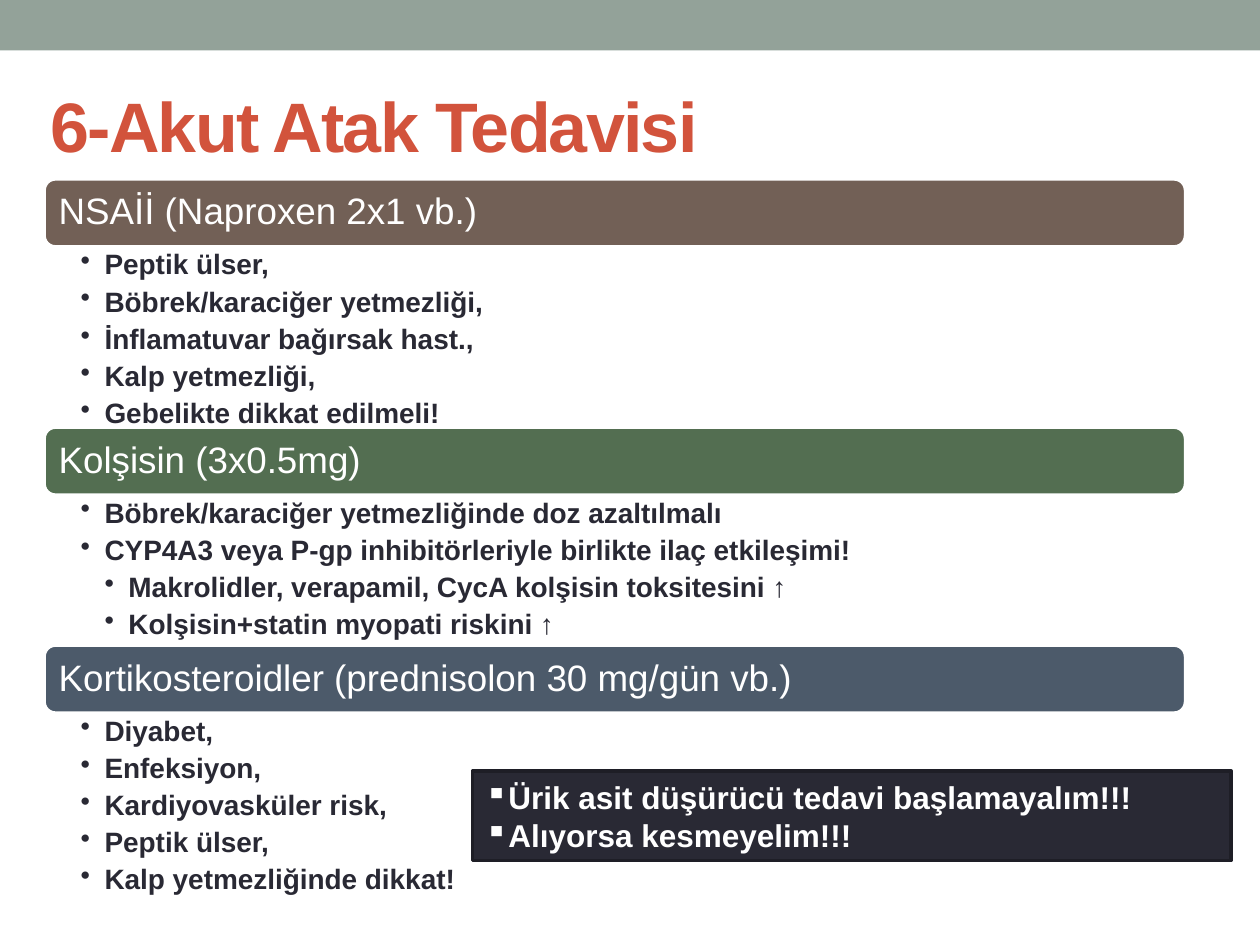
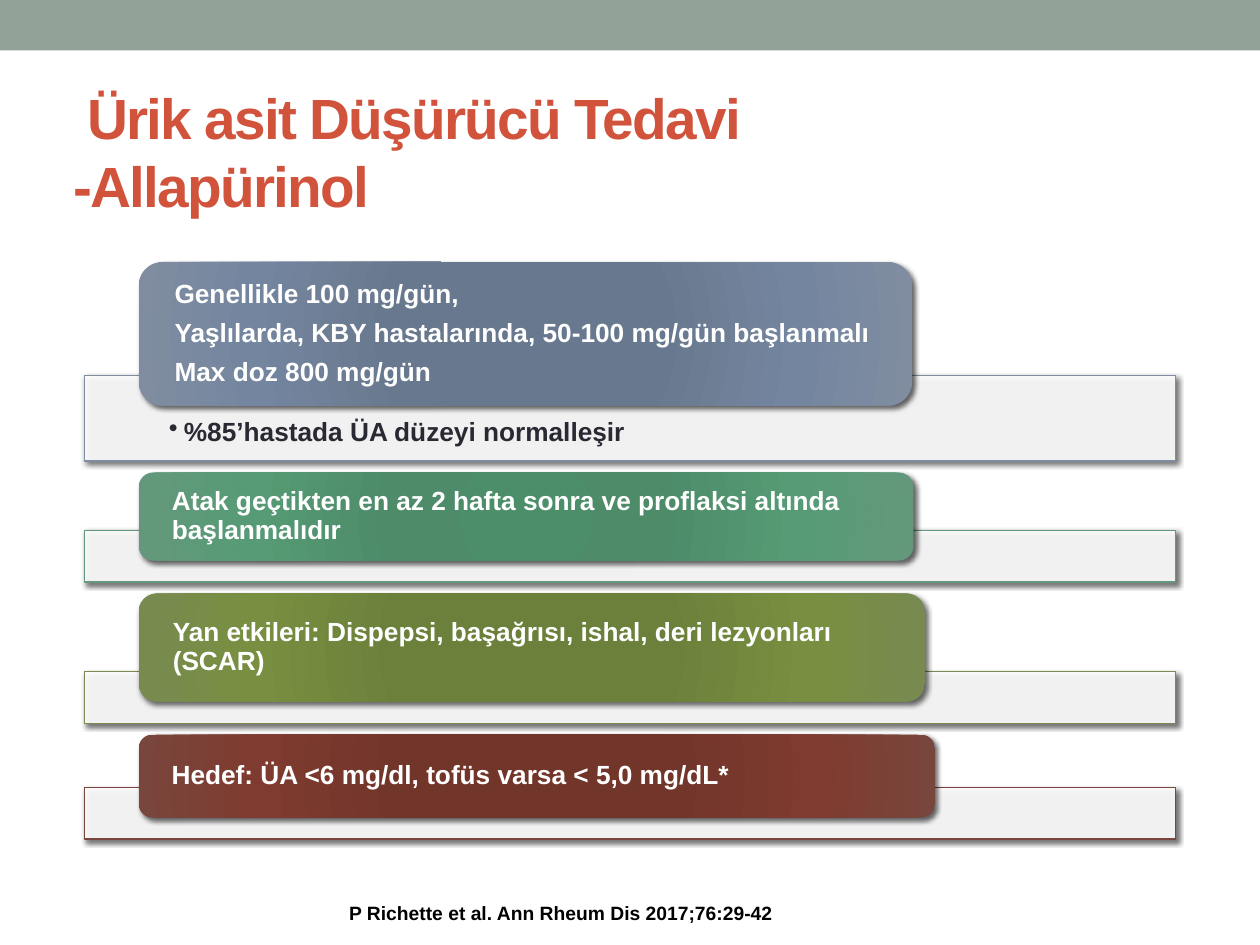
from dataclasses import dataclass
from typing import Optional

from lxml.etree import SubElement
from pptx import Presentation
from pptx.dml.color import RGBColor
from pptx.enum.shapes import MSO_SHAPE
from pptx.enum.text import MSO_ANCHOR, MSO_AUTO_SIZE, PP_ALIGN
from pptx.oxml import parse_xml
from pptx.oxml.ns import nsdecls, qn
from pptx.presentation import Presentation as Deck
from pptx.shapes.autoshape import Shape
from pptx.slide import Slide
from pptx.util import Inches, Pt

FONT = "Arial"
BAND, TITLE = "93A299", "D2533C"
DARK, DARK_EDGE, WHITE, BLACK = "292934", "1E1E26", "FFFFFF", "000000"
GRADIENT_STOPS = (0, 34, 70, 100)


@dataclass(frozen=True)
class Line:
    text: str
    bullet: str = ""
    level: int = 0
    hang: float = 0.0


@dataclass(frozen=True)
class Style:
    size: float
    color: str
    bold: bool = True
    line_spacing: float = 1.0
    after: float = 0.0
    tracking: float = 0.0


@dataclass(frozen=True)
class Drug:
    name: str
    color: str
    body_height: float
    notes: tuple[Line, ...]


@dataclass(frozen=True)
class Rule:
    lines: tuple[str, ...]
    width: float
    height: float
    gradient: tuple[str, str, str, str]
    bar_height: float = 0.41
    detail: str = ""


DRUG_NAME = Style(21, WHITE, bold=False, line_spacing=0.9, after=7)
DRUG_NOTE = Style(16, DARK, line_spacing=0.9, after=4)
WARNING = Style(18, WHITE)
RULE_TEXT = Style(15, WHITE, line_spacing=0.9, after=6)
RULE_DETAIL = Style(15, DARK, line_spacing=0.9, after=3)
CITATION = Style(11, BLACK)


def note(text: str, level: int = 1) -> Line:
    return Line(text, "•", level, 0.19)


DRUGS = (
    Drug("NSAİİ (Naproxen 2x1 vb.)", "726056", 1.43, (
        note("Peptik ülser,"),
        note("Böbrek/karaciğer yetmezliği,"),
        note("İnflamatuvar bağırsak hast.,"),
        note("Kalp yetmezliği,"),
        note("Gebelikte dikkat edilmeli!"),
    )),
    Drug("Kolşisin (3x0.5mg)", "536E51", 1.19, (
        note("Böbrek/karaciğer yetmezliğinde doz azaltılmalı"),
        note("CYP4A3 veya P-gp inhibitörleriyle birlikte ilaç etkileşimi!"),
        note("Makrolidler, verapamil, CycA kolşisin toksitesini ↑", 2),
        note("Kolşisin+statin myopati riskini ↑", 2),
    )),
    Drug("Kortikosteroidler (prednisolon 30 mg/gün vb.)", "4C5A6A", 1.43, (
        note("Diyabet,"),
        note("Enfeksiyon,"),
        note("Kardiyovasküler risk,"),
        note("Peptik ülser,"),
        note("Kalp yetmezliğinde dikkat!"),
    )),
)

RULES = (
    Rule(("Genellikle 100 mg/gün,",
          "Yaşlılarda, KBY hastalarında, 50-100 mg/gün başlanmalı",
          "Max doz 800 mg/gün"),
         6.14, 1.14, ("677790", "68788E", "74869F", "808DA0"),
         0.68, "%85’hastada ÜA düzeyi normalleşir"),
    Rule(("Atak geçtikten en az 2 hafta sonra ve proflaksi altında başlanmalıdır",),
         6.15, 0.70, ("4B8E69", "4D8B69", "569B75", "64987C")),
    Rule(("Yan etkileri: Dispepsi, başağrısı, ishal, deri lezyonları (SCAR)",),
         6.24, 0.86, ("6C8238", "6B803A", "788F41", "788A50")),
    Rule(("Hedef: ÜA <6 mg/dl, tofüs varsa < 5,0 mg/dL*",),
         6.32, 0.66, ("743327", "72352A", "7F3B2F", "79463D")),
)


def rgb(color: str) -> RGBColor:
    return RGBColor.from_string(color)


def write(box: Shape, lines: tuple[Line, ...], style: Style,
          insets: tuple[float, float, float, float] = (0.1, 0.05, 0.1, 0.05),
          anchor: MSO_ANCHOR = MSO_ANCHOR.MIDDLE) -> None:
    """Fill a shape with one paragraph per line; a newline in a line is a break."""
    frame = box.text_frame
    frame.word_wrap = True
    frame.auto_size = MSO_AUTO_SIZE.NONE
    frame.vertical_anchor = anchor
    (frame.margin_left, frame.margin_top,
     frame.margin_right, frame.margin_bottom) = map(Inches, insets)
    for index, line in enumerate(lines):
        para = frame.add_paragraph() if index else frame.paragraphs[0]
        para.alignment = PP_ALIGN.LEFT
        para.level = line.level
        para.line_spacing = style.line_spacing
        para.space_before = Pt(0)
        para.space_after = Pt(style.after)
        if line.bullet:
            properties = para._p.get_or_add_pPr()
            properties.set("marL", str(Inches(line.hang * max(line.level, 1))))
            properties.set("indent", str(-Inches(line.hang)))
            SubElement(properties, qn("a:buChar"), char=line.bullet)
        for part_index, part in enumerate(line.text.split("\n")):
            if part_index:
                para.add_line_break()
            span = para.add_run()
            span.text = part
            span.font.name = FONT
            span.font.size = Pt(style.size)
            span.font.bold = style.bold
            span.font.color.rgb = rgb(style.color)
            if style.tracking:
                span.font._element.set("spc", str(round(style.tracking * 100)))


def add_box(slide: Slide, kind: MSO_SHAPE, left: float, top: float, width: float,
            height: float, fill: Optional[str] = None,
            edge: Optional[str] = None, edge_width: float = 2.08) -> Shape:
    box = slide.shapes.add_shape(
        kind, Inches(left), Inches(top), Inches(width), Inches(height))
    box.shadow.inherit = False
    if fill:
        box.fill.solid()
        box.fill.fore_color.rgb = rgb(fill)
    if edge:
        box.line.color.rgb = rgb(edge)
        box.line.width = Pt(edge_width)
    else:
        box.line.fill.background()
    return box


def add_text(slide: Slide, left: float, top: float, width: float, height: float,
             lines: tuple[Line, ...], style: Style,
             insets: tuple[float, float, float, float]) -> None:
    box = slide.shapes.add_textbox(
        Inches(left), Inches(top), Inches(width), Inches(height))
    write(box, lines, style, insets, MSO_ANCHOR.TOP)


def cast_shadow(box: Shape) -> None:
    effects = box.element.spPr.find(qn("a:effectLst"))
    effects.append(parse_xml(
        f'<a:outerShdw {nsdecls("a")} blurRad="{Pt(3)}" dist="{Pt(2)}" '
        f'dir="{45 * 60000}" rotWithShape="0"><a:srgbClr val="{BLACK}">'
        '<a:alpha val="60000"/></a:srgbClr></a:outerShdw>'))


def fill_radial(box: Shape, colors: tuple[str, ...]) -> None:
    stops = "".join(
        f'<a:gs pos="{stop * 1000}"><a:srgbClr val="{color}"/></a:gs>'
        for stop, color in zip(GRADIENT_STOPS, colors))
    box.element.spPr.find(qn("a:prstGeom")).addnext(parse_xml(
        f'<a:gradFill {nsdecls("a")} rotWithShape="1"><a:gsLst>{stops}</a:gsLst>'
        '<a:path path="circle"><a:fillToRect l="100000" t="100000" '
        'r="100000" b="100000"/></a:path></a:gradFill>'))


def add_slide(deck: Deck, title: str, size: float, left: float, top: float,
              width: float, height: float) -> Slide:
    slide = deck.slides.add_slide(deck.slide_layouts.get_by_name("Title Only"))
    box = slide.shapes.title
    box.left, box.top = Inches(left), Inches(top)
    box.width, box.height = Inches(width), Inches(height)
    write(box, (Line(title),), Style(size, TITLE, tracking=-1))
    return slide


def move_band_to_master(deck: Deck, slide: Slide) -> None:
    """Draw the top band, then hand it to the master so every slide shows it."""
    band = add_box(slide, MSO_SHAPE.RECTANGLE, 0, 0, 10, 0.4, BAND)
    band.element.nvSpPr.cNvPr.set("id", "100")
    deck.slide_master.shapes.element.insert(2, band.element)


def build_attack_slide(deck: Deck) -> None:
    slide = add_slide(deck, "6-Akut Atak Tedavisi", 40, 0.3, 0.36, 6.98, 1.26)
    move_band_to_master(deck, slide)
    left, top, width, header_height = 0.35, 1.42, 9.06, 0.54
    for drug in DRUGS:
        header = add_box(slide, MSO_SHAPE.ROUNDED_RECTANGLE, left, top, width,
                         header_height, drug.color, WHITE)
        write(header, (Line(drug.name),), DRUG_NAME, (0.09,) * 4)
        top += header_height
        add_text(slide, left, top, width, drug.body_height, drug.notes,
                 DRUG_NOTE, (0.29, 0.03, 0.16, 0.03))
        top += drug.body_height
    warning = add_box(slide, MSO_SHAPE.RECTANGLE, 3.75, 6.12, 6.02, 0.71,
                      DARK, DARK_EDGE)
    write(warning, (
        Line("Ürik asit düşürücü tedavi başlamayalım!!!", "▪", hang=0.15),
        Line("Alıyorsa kesmeyelim!!!", "▪", hang=0.15),
    ), WARNING)


def build_allopurinol_slide(deck: Deck) -> None:
    slide = add_slide(deck, " Ürik asit Düşürücü Tedavi\n-Allapürinol", 32.4,
                      0.48, 0.61, 7.98, 1.17)
    top, overlap, gap = 2.08, 0.24, 0.09
    for rule in RULES:
        bar_top = top + rule.height - overlap
        bar = add_box(slide, MSO_SHAPE.RECTANGLE, 0.67, bar_top, 8.66,
                      rule.bar_height, WHITE, rule.gradient[-1], 0.75)
        color = bar.element.spPr.find(qn("a:solidFill")).find(qn("a:srgbClr"))
        SubElement(color, qn("a:alpha"), val="90000")
        cast_shadow(bar)
        if rule.detail:
            write(bar, (Line(rule.detail, "•", 1, 0.12),), RULE_DETAIL,
                  (0.67, 0.34, 0.67, 0.12), MSO_ANCHOR.TOP)
        label = add_box(slide, MSO_SHAPE.ROUNDED_RECTANGLE, 1.1, top,
                        rule.width, rule.height)
        fill_radial(label, rule.gradient)
        cast_shadow(label)
        write(label, tuple(map(Line, rule.lines)), RULE_TEXT, (0.23, 0, 0.23, 0))
        top = bar_top + rule.bar_height + gap
    add_text(slide, 2.77, 7.15, 4.29, 0.25,
             (Line("P Richette et al. Ann Rheum Dis 2017;76:29-42"),),
             CITATION, (0, 0, 0, 0))


def main() -> None:
    deck = Presentation()
    deck.slide_width, deck.slide_height = Inches(10), Inches(7.5)
    build_attack_slide(deck)
    build_allopurinol_slide(deck)
    deck.save("out.pptx")


if __name__ == "__main__":
    main()
